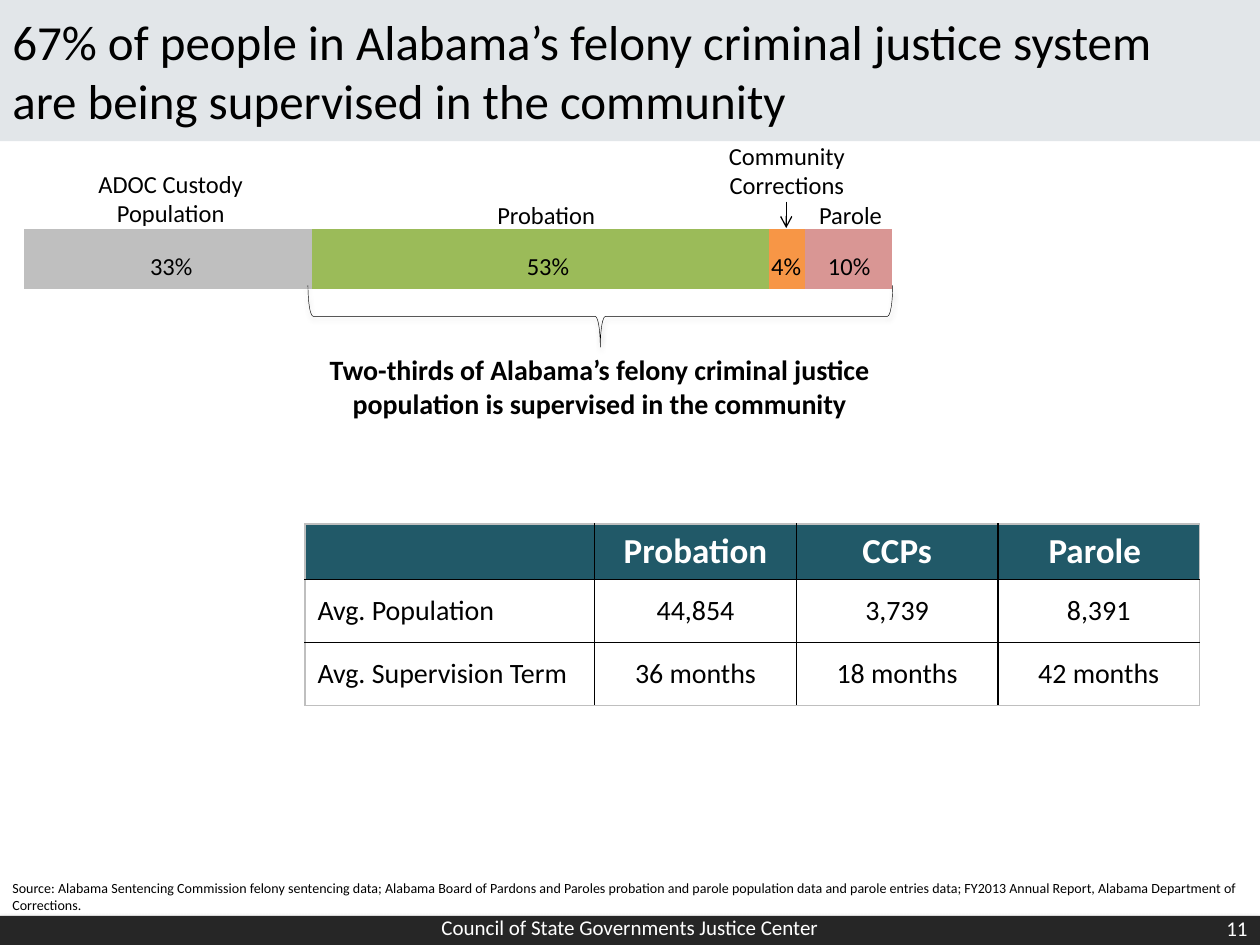
from pptx import Presentation
from pptx.chart.data import CategoryChartData
from pptx.dml.color import RGBColor
from pptx.enum.chart import XL_CHART_TYPE as ChartType
from pptx.enum.shapes import MSO_CONNECTOR as Connector, MSO_SHAPE as Shape
from pptx.enum.text import MSO_ANCHOR as Anchor, PP_ALIGN as Align
from pptx.oxml import parse_xml
from pptx.oxml.ns import nsdecls, qn
from pptx.util import Inches, Pt

FONT = "Calibri"
COLORS = {
    "black": "000000", "white": "FFFFFF", "footer": "262626", "banner": "E2E6E9",
    "header": "215968", "custody": "BFBFBF", "probation": "9BBB59",
    "corrections": "F79646", "parole": "D99694", "border": "BFBFBF",
}
CELL = Inches(0.1)
SEGMENTS = [("custody", 63), ("probation", 100), ("corrections", 8), ("parole", 19)]
AXIS_MAXIMUM = 228
LABELS = [
    ("ADOC Custody Population", 6.7, 12.9, 13.7, 5.7),
    ("Probation", 36.5, 15.4, 13.7, 3.4),
    ("Parole", 63.6, 15.4, 7.8, 3.4),
    ("Community \nCorrections", 56.7, 10.7, 11.5, 5.7),
    ("33%", 10.1, 19.4, 7, 2.5),
    ("53%", 40, 19.4, 7, 2.5),
    ("4%", 59.2, 19.4, 6.4, 2.5),
    ("10%", 63.9, 19.4, 7, 2.5),
]
ROWS = [
    ["", "Probation", "CCPs", "Parole "],
    ["Avg. Population", "44,854", "3,739", "8,391"],
    ["Avg. Supervision Term", "36 months", "18 months", "42 months"],
]
COLUMN_WIDTHS = [23, 16, 16, 16]
ROW_HEIGHTS = [4.4, 5, 5]


def color(name):
    return RGBColor.from_string(COLORS[name])


def grid(*cells):
    return [round(cell * CELL) for cell in cells]


def paint(target, name):
    target.fill.solid()
    target.fill.fore_color.rgb = color(name)


def write(text_frame, text, size, ink="black", align=Align.LEFT, bold=False):
    text_frame.text = text
    text_frame.word_wrap = True
    for paragraph in text_frame.paragraphs:
        paragraph.alignment = align
        for run in paragraph.runs:
            run.font.name = FONT
            run.font.size = Pt(size)
            run.font.bold = bold
            run.font.color.rgb = color(ink)


def add_text(slide, place, text, size, anchor=Anchor.TOP, **style):
    box = slide.shapes.add_textbox(*grid(*place))
    write(box.text_frame, text, size, **style)
    box.text_frame.vertical_anchor = anchor
    return box


def add_band(slide, place, name):
    band = slide.shapes.add_shape(Shape.RECTANGLE, *grid(*place))
    paint(band, name)
    band.line.fill.background()
    band.shadow.inherit = False
    return band


def add_shadow(shape, opacity):
    shape.shadow.inherit = False
    effects = shape._element.spPr.find(qn("a:effectLst"))
    effects.append(parse_xml(
        f'<a:outerShdw {nsdecls("a")} blurRad="{Pt(3.1)}" dist="{Pt(1.7)}" '
        f'dir="5400000" rotWithShape="0"><a:srgbClr val="{COLORS["black"]}">'
        f'<a:alpha val="{opacity * 1000}"/></a:srgbClr></a:outerShdw>'))


def add_population_bar(slide, place):
    data = CategoryChartData()
    data.categories = ["1"]
    for number, (_, value) in enumerate(SEGMENTS, 1):
        data.add_series(f"Series {number}", [value])
    chart = slide.shapes.add_chart(ChartType.BAR_STACKED, *grid(*place), data).chart
    chart.has_legend = chart.has_title = False
    chart.font.name = FONT
    chart.font.size = Pt(18)
    chart.font.color.rgb = color("black")
    chart.value_axis.minimum_scale = 0
    chart.value_axis.maximum_scale = AXIS_MAXIMUM
    chart.value_axis.has_major_gridlines = False
    chart.value_axis.visible = chart.category_axis.visible = False
    plot = chart.plots[0]
    plot.gap_width, plot.overlap, plot.vary_by_categories = 150, 100, False
    for series, (name, _) in zip(plot.series, SEGMENTS):
        paint(series.format, name)
    plot_area = chart._chartSpace.chart.plotArea
    for old in plot_area.findall(qn("c:layout")):
        plot_area.remove(old)
    shares = {"x": 0.028, "y": 0.081, "w": 0.972, "h": 0.838}
    modes = '<c:xMode val="edge"/><c:yMode val="edge"/>'
    sizes = "".join(f'<c:{key} val="{share}"/>' for key, share in shares.items())
    plot_area.insert(0, parse_xml(
        f'<c:layout {nsdecls("c")}><c:manualLayout><c:layoutTarget val="inner"/>'
        f'{modes}{sizes}</c:manualLayout></c:layout>'))


def add_brace(slide, center_x, center_y, span, depth):
    place = grid(center_x - depth / 2, center_y - span / 2, depth, span)
    brace = slide.shapes.add_shape(Shape.LEFT_BRACE, *place)
    brace.rotation = 270
    brace.fill.background()
    brace.line.color.rgb = color("black")
    brace.line.width = Pt(0.25)
    add_shadow(brace, 38)


def add_arrow(slide, *ends):
    arrow = slide.shapes.add_connector(Connector.STRAIGHT, *grid(*ends))
    arrow.line.color.rgb = color("black")
    arrow.line.width = Pt(0.75)
    arrow.line._get_or_add_ln().append(
        parse_xml(f'<a:tailEnd {nsdecls("a")} type="arrow"/>'))
    arrow._element.spPr.append(parse_xml(f'<a:effectLst {nsdecls("a")}/>'))


def set_borders(cell, outer):
    properties = cell._tc.get_or_add_tcPr()
    for position, side in enumerate(("L", "R", "T", "B")):
        name = "border" if side in outer else "black"
        properties.insert(position, parse_xml(
            f'<a:ln{side} {nsdecls("a")} w="{Pt(1)}"><a:solidFill>'
            f'<a:srgbClr val="{COLORS[name]}"/></a:solidFill></a:ln{side}>'))


def add_supervision_table(slide, left, top):
    place = grid(left, top, sum(COLUMN_WIDTHS), sum(ROW_HEIGHTS))
    table = slide.shapes.add_table(len(ROWS), len(COLUMN_WIDTHS), *place).table
    for column, width in zip(table.columns, grid(*COLUMN_WIDTHS)):
        column.width = width
    for row, height in zip(table.rows, grid(*ROW_HEIGHTS)):
        row.height = height
    last_row, last_column = len(ROWS) - 1, len(COLUMN_WIDTHS) - 1
    for r, texts in enumerate(ROWS):
        for c, text in enumerate(texts):
            cell = table.cell(r, c)
            header = r == 0
            write(cell.text_frame, text, 20 if header else 16,
                  ink="white" if header else "black",
                  align=Align.CENTER if c else Align.LEFT, bold=header)
            cell.vertical_anchor = Anchor.MIDDLE
            paint(cell, "header" if header else "white")
            edges = {"L": c == 0, "R": c == last_column, "T": r == 0, "B": r == last_row}
            set_borders(cell, [side for side, at_edge in edges.items() if at_edge])


def main():
    presentation = Presentation()
    presentation.slide_width, presentation.slide_height = grid(100, 75)
    slide = presentation.slides.add_slide(presentation.slide_layouts[6])

    add_shadow(add_band(slide, (0, 72.7, 100, 2.3), "footer"), 35)
    add_population_bar(slide, (-0.5, 13.5, 85.1, 14.1))
    title = add_band(slide, (0, 0, 100, 11.2), "banner")
    write(title.text_frame, "67% of people in Alabama’s felony criminal justice system "
          "\vare being supervised in the community", 28)
    title.text_frame.vertical_anchor = Anchor.MIDDLE

    add_supervision_table(slide, 24.2, 41.6)
    add_brace(slide, 47.65, 25.1, 46.4, 4.9)
    add_text(slide, (24.4, 27.5, 46.4, 6.4),
             "Two-thirds of Alabama’s felony criminal justice population "
             "is supervised in the community", 16, align=Align.CENTER, bold=True)
    for text, *place in LABELS:
        add_text(slide, place, text, 14, align=Align.CENTER)
    add_arrow(slide, 62.4, 16, 62.4, 18.1)

    source = add_text(
        slide, (0, 69.3, 100, 3.6),
        "Source: Alabama Sentencing Commission felony sentencing data; Alabama Board of "
        "Pardons and Paroles probation and parole population data and parole entries data; "
        "FY2013 Annual Report, Alabama Department of Corrections.", 8)
    source.text_frame.paragraphs[0].space_after = Pt(2)
    add_text(slide, (32.2, 71.5, 35.6, 4.2), "Council of State Governments Justice Center",
             12, Anchor.MIDDLE, ink="white", align=Align.CENTER)
    add_text(slide, (76.7, 71.7, 23.3, 4), "11", 12, Anchor.MIDDLE,
             ink="white", align=Align.RIGHT)
    presentation.save("out.pptx")


if __name__ == "__main__":
    main()
